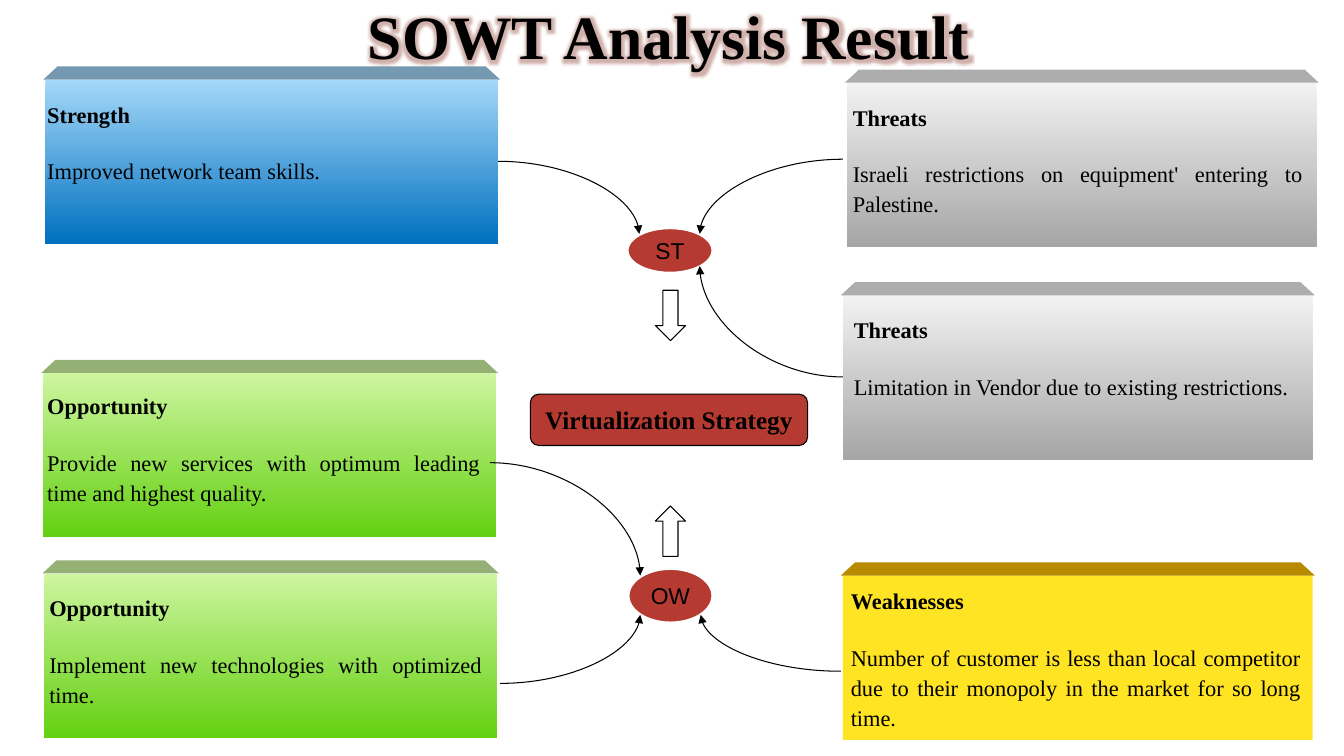
from lxml import etree
from pptx import Presentation
from pptx.dml.color import RGBColor
from pptx.enum.shapes import MSO_CONNECTOR, MSO_SHAPE
from pptx.enum.text import MSO_ANCHOR, PP_ALIGN
from pptx.oxml import parse_xml
from pptx.oxml.ns import qn
from pptx.util import Inches, Pt

RECTANGLE, ROUNDED = MSO_SHAPE.RECTANGLE, MSO_SHAPE.ROUNDED_RECTANGLE
OVAL, TRAPEZOID = MSO_SHAPE.OVAL, MSO_SHAPE.TRAPEZOID
DOWN, UP = MSO_SHAPE.DOWN_ARROW, MSO_SHAPE.UP_ARROW
CURVE = MSO_CONNECTOR.CURVE
LEFT, CENTER, JUSTIFY = PP_ALIGN.LEFT, PP_ALIGN.CENTER, PP_ALIGN.JUSTIFY
MIDDLE = MSO_ANCHOR.MIDDLE

BLACK = RGBColor(0x00, 0x00, 0x00)
WHITE = RGBColor(0xFF, 0xFF, 0xFF)
RED = RGBColor(0xB5, 0x3A, 0x31)
BLUE_TOP = RGBColor(0xA5, 0xD8, 0xF9)
BLUE_BASE = RGBColor(0x00, 0x70, 0xC0)
BLUE_LID = RGBColor(0x75, 0x99, 0xB1)
GREY_TOP = RGBColor(0xF2, 0xF2, 0xF2)
GREY_BASE = RGBColor(0xA6, 0xA6, 0xA6)
GREY_LID = RGBColor(0xAD, 0xAD, 0xAD)
GREEN_TOP = RGBColor(0xCE, 0xF5, 0xA0)
GREEN_BASE = RGBColor(0x64, 0xD0, 0x11)
GREEN_LID = RGBColor(0x94, 0xB0, 0x74)
YELLOW = RGBColor(0xFF, 0xE4, 0x23)
YELLOW_LID = RGBColor(0xB8, 0x8A, 0x00)

SERIF, SANS = "Times New Roman", "Arial"
CELL = Inches(0.1)
LID_ROWS = 1.3
CARD_ROWS = 16.3
LEFT_COLUMNS, RIGHT_COLUMNS = 44.9, 46.6
DRAWING = "http://schemas.openxmlformats.org/drawingml/2006/main"

BLUE = (BLUE_TOP, BLUE_BASE, BLUE_LID)
GREY = (GREY_TOP, GREY_BASE, GREY_LID)
GREEN = (GREEN_TOP, GREEN_BASE, GREEN_LID)
GOLD = (YELLOW, YELLOW, YELLOW_LID)

CARDS = [
    ((4.5, 7.9, LEFT_COLUMNS), (3.7, 9.5), BLUE,
     "Strength", "Improved network team skills."),
    ((84, 8.2, RIGHT_COLUMNS), (83.6, 9.8), GREY,
     "Threats", "Israeli restrictions on equipment' entering to Palestine."),
    ((83.6, 29.3, RIGHT_COLUMNS), (83.7, 30.9), GREY,
     "Threats", "Limitation in Vendor due to existing restrictions."),
    ((83.6, 57.1, RIGHT_COLUMNS), (83.4, 57.8), GOLD,
     "Weaknesses", "Number of customer is less than local competitor "
     "due to their monopoly in the market for so long time."),
    ((4.3, 37, LEFT_COLUMNS), (3.7, 38.4), GREEN,
     "Opportunity", "Provide new services with optimum leading time and highest quality."),
    ((4.4, 56.9, LEFT_COLUMNS), (3.9, 58.5), GREEN,
     "Opportunity", "Implement new technologies with optimized time."),
]

CURVES = [
    ((83.6, 37.4), (69.4, 26.4)),
    ((83.4, 66.6), (69.5, 61)),
    ((48.6, 45.9), (63.5, 57.1)),
    ((49.6, 67.8), (63.5, 61)),
    ((49.4, 16), (63.4, 23.2)),
    ((83.6, 15.8), (69.4, 23.2)),
]

HUB = {"size": Pt(16.3), "name": SANS, "bold": False}
GOAL = {"size": Pt(18), "name": SERIF, "bold": True}
HEADING = {"size": Pt(16), "name": SERIF, "bold": True}
BODY = {"size": Pt(16), "name": SERIF, "bold": False}
TITLE = {"size": Pt(44), "name": SERIF, "bold": True}


def cells(*counts):
    return [round(count * CELL) for count in counts]


def write(para, text, style, align):
    para.alignment = align
    span = para.add_run()
    span.text = text
    for name, value in style.items():
        setattr(span.font, name, value)
    span.font.color.rgb = BLACK
    return span


def add_block(page, kind, box, fill=None, line=None, width=0.75):
    block = page.shapes.add_shape(kind, *cells(*box))
    block.shadow.inherit = False
    if fill is None:
        block.fill.background()
    else:
        block.fill.solid()
        block.fill.fore_color.rgb = fill
    if line is None:
        block.line.fill.background()
    else:
        block.line.color.rgb = line
        block.line.width = Pt(width)
    return block


def add_card(page, box, text_corner, colours, heading, body):
    left, top, width = box
    face_top, face_base, lid_colour = colours
    face = add_block(page, RECTANGLE, (left, top, width, CARD_ROWS), face_top)
    if face_top != face_base:
        face.fill.gradient()
        face.fill.gradient_angle = 270
        for stop, colour in zip(face.fill.gradient_stops, (face_top, face_base)):
            stop.color.rgb = colour
    lid = add_block(page, TRAPEZOID, (left - 0.2, top - LID_ROWS, width + 0.4, LID_ROWS), lid_colour)
    lid.adjustments[0] = 1.08

    frame = page.shapes.add_textbox(*cells(*text_corner, width, CARD_ROWS - 1.6)).text_frame
    frame.word_wrap = True
    write(frame.paragraphs[0], heading, HEADING, LEFT)
    para = frame.add_paragraph()
    para.space_before = Pt(19)
    para.line_spacing = 1.12
    write(para, body, BODY, JUSTIFY)


def add_label(page, kind, box, text, style, line, width):
    label = add_block(page, kind, box, RED, line, width)
    frame = label.text_frame
    frame.vertical_anchor = MIDDLE
    write(frame.paragraphs[0], text, style, CENTER)


def add_curve(page, start, end):
    curve = page.shapes.add_connector(CURVE, *cells(*start, *end))
    curve.line.color.rgb = BLACK
    curve.line.width = Pt(0.75)
    properties = curve.element.spPr
    properties.find(qn("a:prstGeom")).set("prst", "curvedConnector2")
    etree.SubElement(properties.find(qn("a:ln")), qn("a:tailEnd"), type="triangle")
    etree.SubElement(properties, qn("a:effectLst"))


def add_strategy(page):
    add_label(page, OVAL, (62.2, 22.6, 8.5, 4.5), "ST", HUB, WHITE, 2)
    add_label(page, OVAL, (62.3, 56.4, 8.4, 5.4), "OW", HUB, WHITE, 2)
    for start, end in CURVES:
        add_curve(page, start, end)
    add_label(page, ROUNDED, (52.6, 39.1, 27.5, 5.1), "Virtualization Strategy", GOAL, BLACK, 0.75)
    for kind, top in ((DOWN, 28.8), (UP, 50.2)):
        add_block(page, kind, (65, top, 3, 5), line=BLACK)


def add_title(page):
    title = page.shapes.title
    title.left, title.top, title.width, title.height = cells(-0.3, -0.7, 133.3, 8.4)
    title.text_frame.vertical_anchor = MIDDLE
    span = write(title.text_frame.paragraphs[0], "SOWT Analysis Result", TITLE, CENTER)
    glow = parse_xml(
        f'<a:effectLst xmlns:a="{DRAWING}"><a:glow rad="101600">'
        '<a:srgbClr val="8A3A2A"><a:alpha val="40000"/></a:srgbClr>'
        '</a:glow></a:effectLst>')
    span.font.fill
    span.font._element.find(qn("a:solidFill")).addnext(glow)
    title.element.getparent().append(title.element)


def main():
    deck = Presentation()
    deck.slide_width, deck.slide_height = Inches(13.33), Inches(7.5)
    page = deck.slides.add_slide(deck.slide_layouts[5])
    for card in CARDS:
        add_card(page, *card)
    add_strategy(page)
    add_title(page)
    deck.save("out.pptx")


if __name__ == "__main__":
    main()
